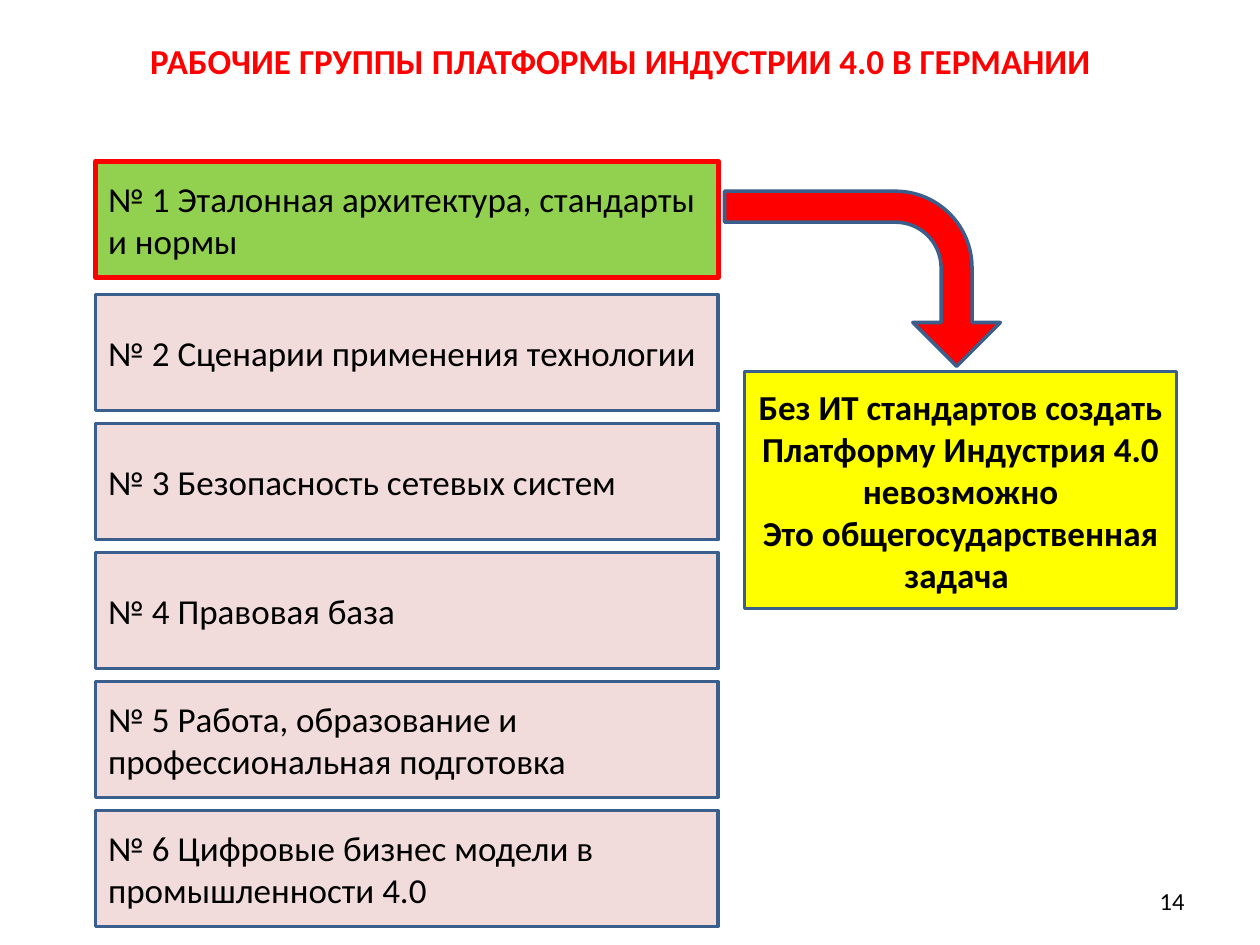
from dataclasses import dataclass

from pptx import Presentation
from pptx.dml.color import RGBColor
from pptx.enum.shapes import MSO_SHAPE
from pptx.enum.text import MSO_ANCHOR, MSO_AUTO_SIZE, PP_ALIGN
from pptx.util import Cm, Pt

COLOURS = {
    "red": "FF0000",
    "green": "92D050",
    "pink": "F2DCDB",
    "yellow": "FFFF00",
    "outline": "3A5F8C",
    "text": "000000",
}
FIRST_TOP = 3.25
SECOND_TOP = 5.94
GROUP_PITCH = 2.6
GROUPS = [
    "Эталонная архитектура, стандарты и нормы",
    "Сценарии применения технологии",
    "Безопасность сетевых систем",
    "Правовая база",
    "Работа, образование и профессиональная подготовка",
    "Цифровые бизнес модели в промышленности 4.0",
]


@dataclass
class Panel:
    """A filled rectangle with text; lengths are in centimetres."""
    lines: list[str]
    left: float
    top: float
    width: float
    height: float
    fill: str
    line: str = "outline"
    line_width: float = 2
    align: PP_ALIGN = PP_ALIGN.LEFT
    bold: bool = False


def colour(name: str) -> RGBColor:
    return RGBColor.from_string(COLOURS[name])


def place(shape, left: float, top: float, width: float, height: float) -> None:
    shape.left, shape.top = Cm(left), Cm(top)
    shape.width, shape.height = Cm(width), Cm(height)


def write(frame, lines: list[str], align: PP_ALIGN, size: float = 20,
          ink: str = "text", bold: bool = False,
          anchor: MSO_ANCHOR = MSO_ANCHOR.MIDDLE, wrap: bool = True) -> None:
    frame.text = "\n".join(lines)
    frame.word_wrap = wrap
    frame.auto_size = MSO_AUTO_SIZE.NONE
    frame.vertical_anchor = anchor
    for para in frame.paragraphs:
        para.alignment = align
        para.font.name = "Calibri"
        para.font.size = Pt(size)
        para.font.bold = bold
        para.font.color.rgb = colour(ink)


def paint(shape, fill: str, line: str, line_width: float) -> None:
    shape.shadow.inherit = False
    shape.fill.solid()
    shape.fill.fore_color.rgb = colour(fill)
    shape.line.color.rgb = colour(line)
    shape.line.width = Pt(line_width)


def add_panel(page, panel: Panel) -> None:
    box = page.shapes.add_shape(MSO_SHAPE.RECTANGLE, 0, 0, 0, 0)
    place(box, panel.left, panel.top, panel.width, panel.height)
    paint(box, panel.fill, panel.line, panel.line_width)
    write(box.text_frame, panel.lines, panel.align, bold=panel.bold)


def group_panel(index: int, name: str) -> Panel:
    """The first group is highlighted; the others follow at an even pitch."""
    first = index == 0
    return Panel(
        [f"№ {index + 1} {name}"], 1.93,
        FIRST_TOP if first else SECOND_TOP + (index - 1) * GROUP_PITCH,
        12.55, 2.34,
        fill="green" if first else "pink",
        line="red" if first else "outline",
        line_width=3 if first else 2,
    )


def add_bent_arrow(page) -> None:
    arrow = page.shapes.add_shape(MSO_SHAPE.BENT_ARROW, 0, 0, 0, 0)
    place(arrow, 15.62, 2.84, 3.53, 5.56)
    arrow.rotation = 90
    for index, value in enumerate([0.177, 0.25, 0.25, 0.438]):
        arrow.adjustments[index] = value
    paint(arrow, "red", "outline", 2)


def main() -> None:
    deck = Presentation()
    deck.slide_width, deck.slide_height = Cm(25.4), Cm(19.05)
    page = deck.slides.add_slide(deck.slide_layouts.get_by_name("Title Only"))

    title = page.shapes.title
    place(title, 2.77, 0.66, 19.48, 0.97)
    write(title.text_frame,
          ["РАБОЧИЕ ГРУППЫ ПЛАТФОРМЫ ИНДУСТРИИ 4.0 В ГЕРМАНИИ"],
          PP_ALIGN.CENTER, ink="red", bold=True,
          anchor=MSO_ANCHOR.TOP, wrap=False)

    page_number = page.shapes.add_textbox(Cm(18.2), Cm(17.65), Cm(5.93), Cm(1.01))
    write(page_number.text_frame, ["14"], PP_ALIGN.RIGHT, size=14)

    for index, name in enumerate(GROUPS):
        add_panel(page, group_panel(index, name))
    add_bent_arrow(page)
    add_panel(page, Panel(
        ["Без ИТ стандартов создать Платформу Индустрия 4.0 невозможно",
         "Это общегосударственная задача "],
        15.01, 7.49, 8.71, 4.78, fill="yellow",
        align=PP_ALIGN.CENTER, bold=True))

    deck.save("out.pptx")


if __name__ == "__main__":
    main()
